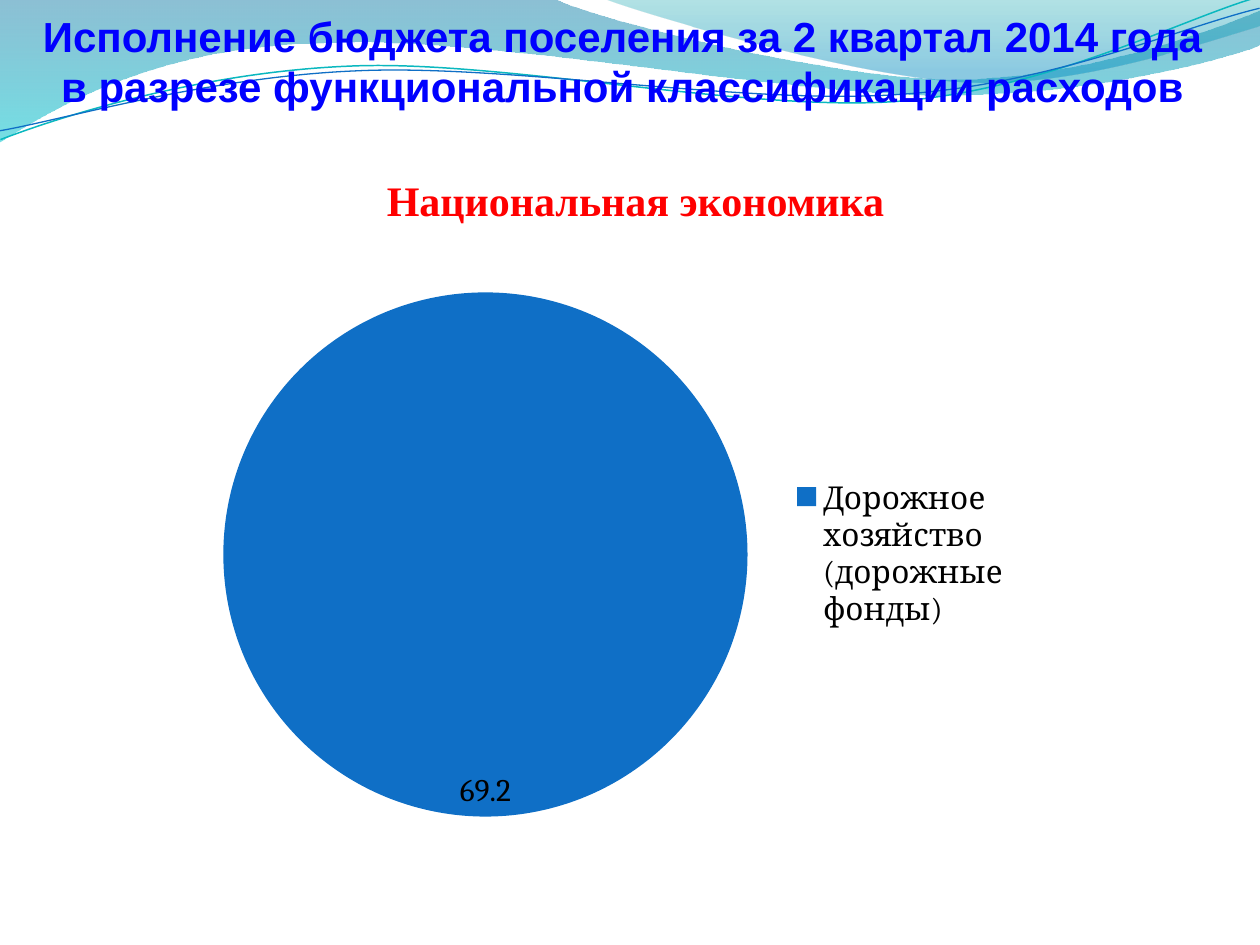
from dataclasses import dataclass

from lxml.etree import SubElement
from pptx import Presentation
from pptx.chart.data import CategoryChartData
from pptx.dml.color import RGBColor
from pptx.enum.chart import XL_CHART_TYPE, XL_LABEL_POSITION, XL_LEGEND_POSITION
from pptx.enum.text import PP_ALIGN
from pptx.oxml.ns import qn
from pptx.shapes.autoshape import Shape
from pptx.slide import Slide
from pptx.util import Pt

SCALE = 914400 / 126
HUES = {
    "deep": "0074A1", "aqua": "00C6CF", "teal": "00A1A9", "sky": "008BBF",
    "cyan": "0AB8BF", "blue": "0F6FC6", "title": "0000FF", "red": "FF0000",
    "black": "000000",
}


@dataclass(frozen=True)
class Stop:
    place: float
    hue: str
    alpha: int


@dataclass(frozen=True)
class Wave:
    """Each leg is one point (straight) or three (Bezier curve), in px."""
    start: tuple
    legs: tuple
    stops: tuple = ()
    hue: str = ""
    width: float = 0
    turn: float = 0


@dataclass(frozen=True)
class Label:
    text: str
    box: tuple
    font: str
    hue: str


WAVES = (
    Wave((0, 0), (
        ((554, -1),),
        ((600, 21), (837, 79), (955, 79)),
        ((1075, 79), (1207, 33), (1260, 11)),
        ((1261, 45),),
        ((1239, 55), (1096, 96), (940, 95)),
        ((784, 95), (481, 35), (324, 43)),
        ((163, 45), (58, 105), (-1, 142)),
        ((0, 0),),
    ), stops=(Stop(0, "deep", 45), Stop(1, "aqua", 55))),
    Wave((604, -1), (
        ((641, 14), (859, 78), (969, 82)),
        ((1079, 87), (1211, 40), (1260, 26)),
        ((1260, 0),),
        ((604, -1),),
    ), stops=(Stop(0, "teal", 30), Stop(0.8, "sky", 45))),
    Wave((-2, 110), (
        ((58, 90), (200, 52), (350, 53)),
        ((499, 53), (745, 118), (896, 114)),
        ((1049, 109), (1184, 45), (1260, 27)),
    ), hue="cyan", width=0.85, turn=357.3),
    Wave((-2, 101), (
        ((57, 94), (207, 57), (357, 58)),
        ((509, 58), (750, 112), (902, 107)),
        ((1052, 104), (1187, 52), (1262, 38)),
    ), hue="blue", width=0.75, turn=357.3),
)

LABELS = (
    Label("Исполнение бюджета поселения за 2 квартал 2014 года "
          "в разрезе функциональной классификации расходов",
          (22, 4, 1201, 165), "Arial", "title"),
    Label("Национальная экономика", (79, 168, 1113, 102),
          "Times New Roman", "red"),
)


def px(size: float) -> int:
    return round(size * SCALE)


def tint(name: str) -> RGBColor:
    return RGBColor.from_string(HUES[name])


def bend(shape: Shape, legs: tuple) -> None:
    """Join each three straight segments of a curved leg into one Bezier."""
    lines = iter(list(shape._element.iter(qn("a:lnTo"))))
    for leg in legs:
        first = next(lines)
        if len(leg) == 3:
            first.tag = qn("a:cubicBezTo")
            curve = first.getparent().find(qn("a:cubicBezTo") + "[last()]")
            for _ in range(2):
                line = next(lines)
                curve.append(line[0])
                line.getparent().remove(line)


def shade(shape: Shape, stops: tuple) -> None:
    """Fill from top to bottom with see-through colours."""
    shape.fill.gradient()
    shape.fill.gradient_angle = 270
    for mark, stop in zip(shape.fill.gradient_stops, stops):
        mark.position = stop.place
        mark.color.rgb = tint(stop.hue)
    nodes = shape.fill._xPr.iter(qn("a:srgbClr"))
    for node, stop in zip(list(nodes), stops):
        SubElement(node, qn("a:alpha"), val=str(stop.alpha * 1000))


def add_wave(slide: Slide, wave: Wave) -> None:
    x, y = wave.start
    pen = slide.shapes.build_freeform(px(x), px(y))
    dots = [(px(a), px(b)) for leg in wave.legs for a, b in leg]
    pen.add_line_segments(dots, close=bool(wave.stops))
    shape = pen.convert_to_shape()
    bend(shape, wave.legs)
    shape.rotation = wave.turn
    shape.shadow.inherit = False
    if wave.stops:
        shade(shape, wave.stops)
        shape.line.fill.background()
    else:
        shape.fill.background()
        shape.line.color.rgb = tint(wave.hue)
        shape.line.width = Pt(wave.width)


def add_label(slide: Slide, label: Label) -> None:
    frame = slide.shapes.add_textbox(*map(px, label.box)).text_frame
    frame.word_wrap = True
    para = frame.paragraphs[0]
    para.alignment = PP_ALIGN.CENTER
    run = para.add_run()
    run.text = label.text
    run.font.name = label.font
    run.font.size = Pt(24)
    run.font.bold = True
    run.font.color.rgb = tint(label.hue)


def add_pie(slide: Slide) -> None:
    data = CategoryChartData()
    data.categories = ["Дорожное хозяйство (дорожные фонды)"]
    data.add_series("Series 1", [69.2])
    box = map(px, (184, 275, 840, 559))
    chart = slide.shapes.add_chart(XL_CHART_TYPE.PIE, *box, data).chart
    chart.has_title = False
    chart.font.name = "Cambria"
    chart.font.size = Pt(18)
    chart.font.color.rgb = tint("black")
    chart.has_legend = True
    chart.legend.position = XL_LEGEND_POSITION.RIGHT
    chart.legend.include_in_layout = False
    plot = chart.plots[0]
    plot.vary_by_categories = True
    fill = plot.series[0].points[0].format.fill
    fill.solid()
    fill.fore_color.rgb = tint("blue")
    plot.has_data_labels = True
    plot.data_labels.show_value = True
    plot.data_labels.position = XL_LABEL_POSITION.INSIDE_END


def main() -> None:
    deck = Presentation()
    deck.slide_width, deck.slide_height = px(1260), px(945)
    slide = deck.slides.add_slide(deck.slide_layouts[6])
    for wave in WAVES:
        add_wave(slide, wave)
    for label in LABELS:
        add_label(slide, label)
    add_pie(slide)
    deck.save("out.pptx")


if __name__ == "__main__":
    main()
